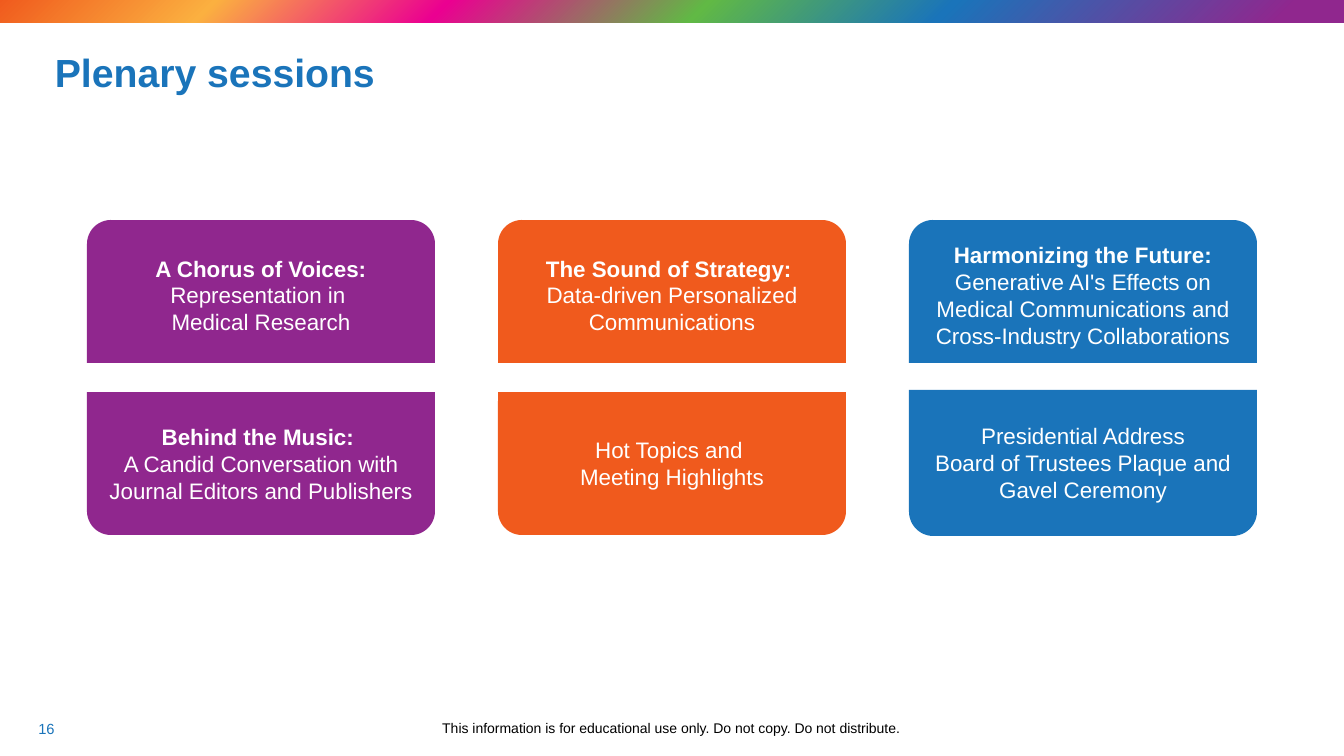
from dataclasses import dataclass

from lxml import etree
from pptx import Presentation
from pptx.dml.color import RGBColor
from pptx.enum.shapes import MSO_SHAPE
from pptx.enum.text import MSO_ANCHOR, PP_ALIGN
from pptx.oxml.ns import qn
from pptx.util import Emu, Pt

RECTANGLE = MSO_SHAPE.RECTANGLE
TAB = MSO_SHAPE.ROUND_2_SAME_RECTANGLE
TOP, MIDDLE = MSO_ANCHOR.TOP, MSO_ANCHOR.MIDDLE
LEFT, CENTER = PP_ALIGN.LEFT, PP_ALIGN.CENTER
EMU_PER_PX = 914400 / 100.8


@dataclass(frozen=True)
class Theme:
    font: str = "Arial"
    purple: str = "90278E"
    orange: str = "F05A1D"
    blue: str = "1A74BA"
    white: str = "FFFFFF"
    black: str = "000000"
    rainbow: tuple = ((0, "F05A1D"), (16, "FBB040"), (33, "EB0091"),
                      (52, "61B945"), (70, "1A74BA"), (95, "90278E"))
    title_size: float = 28
    body_size: float = 16
    number_size: float = 10.5
    notice_size: float = 10


THEME = Theme()

SESSIONS = [
    (THEME.purple,
     [[("A Chorus of Voices:", True), (" Representation in \vMedical Research", False)]],
     [[("Behind the Music: \v", True),
       ("A Candid Conversation with Journal Editors and Publishers", False)]],
     3, (392, 143)),
    (THEME.orange,
     [[("The Sound of Strategy: ", True)],
      [("Data-driven Personalized Communications", False)]],
     [[("Hot Topics and \vMeeting Highlights", False)]],
     2, (392, 143)),
    (THEME.blue,
     [[("Harmonizing the Future: ", True),
       ("Generative AI's Effects on Medical Communications and "
        "Cross-Industry Collaborations", False)]],
     [[("Presidential Address", False)],
      [("Board of Trustees Plaque and Gavel Ceremony", False)]],
     3, (390, 146)),
]


def px(*lengths):
    return [Emu(round(length * EMU_PER_PX)) for length in lengths]


def write(shape, paragraphs, size, color, align=CENTER, anchor=MIDDLE):
    frame = shape.text_frame
    frame.word_wrap = True
    frame.vertical_anchor = anchor
    for index, spans in enumerate(paragraphs):
        para = frame.add_paragraph() if index else frame.paragraphs[0]
        para.alignment = align
        para.font.name = THEME.font
        para.font.size = Pt(size)
        para.font.color.rgb = RGBColor.from_string(color)
        for text, bold in spans:
            for position, line in enumerate(text.split("\v")):
                if position:
                    para.add_line_break()
                if line:
                    span = para.add_run()
                    span.text = line
                    span.font.bold = bold
    return frame


def add_text(page, box, paragraphs, size, color, **layout):
    return write(page.shapes.add_textbox(*px(*box)), paragraphs, size, color, **layout)


def add_block(page, kind, box):
    block = page.shapes.add_shape(kind, *px(*box))
    block.shadow.inherit = False
    block.line.fill.background()
    return block


def add_rainbow_bar(page, box):
    bar = add_block(page, RECTANGLE, box)
    bar.fill.gradient()
    gradient = bar.fill._fill._gradFill
    stops = gradient.find(qn("a:gsLst"))
    for stop in list(stops):
        stops.remove(stop)
    for percent, color in THEME.rainbow:
        stop = etree.SubElement(stops, qn("a:gs"), pos=str(percent * 1000))
        etree.SubElement(stop, qn("a:srgbClr"), val=color)
    direction = gradient.find(qn("a:lin"))
    direction.set("ang", str(45 * 60000))
    direction.set("scaled", "0")


def add_title(page, box):
    frame = add_text(page, box, [[("Plenary sessions", True)]],
                     THEME.title_size, THEME.blue, align=LEFT)
    frame.paragraphs[0].line_spacing = 0.9


def add_tab(page, box, color, round_top):
    tab = add_block(page, TAB, box)
    tab.fill.solid()
    tab.fill.fore_color.rgb = RGBColor.from_string(color)
    tab.adjustments[0], tab.adjustments[1] = (0.167, 0) if round_top else (0, 0.167)
    return tab


def add_lower_label(page, box, paragraphs, line_count):
    left, top, width, height = box
    inset, label_height = 16, 27 * line_count
    label_box = (left + inset, top + (height - label_height) / 2,
                 width - 2 * inset, label_height)
    frame = add_text(page, label_box, paragraphs, THEME.body_size, THEME.white, anchor=TOP)
    frame.margin_left = frame.margin_right = frame.margin_top = frame.margin_bottom = 0


def add_sessions(page, box):
    left, top, width, height = box
    tab_width = 348
    step = (width - tab_width) / (len(SESSIONS) - 1)
    for column, (color, upper, lower, line_count, lower_span) in enumerate(SESSIONS):
        tab_left = left + column * step
        upper_tab = add_tab(page, (tab_left, top, tab_width, height), color, True)
        write(upper_tab, upper, THEME.body_size, THEME.white)
        lower_top, lower_height = lower_span
        lower_box = (tab_left, lower_top, tab_width, lower_height)
        add_tab(page, lower_box, color, False)
        add_lower_label(page, lower_box, lower, line_count)


def add_footer(page, box):
    left, top, width, height = box
    add_text(page, (left, top, 45, height), [[("16", False)]],
             THEME.number_size, THEME.blue, anchor=TOP)
    notice = "This information is for educational use only. Do not copy. Do not distribute."
    add_text(page, (left + 14, top, width - 14, height), [[(notice, False)]],
             THEME.notice_size, THEME.black, anchor=TOP)


def main():
    deck = Presentation()
    deck.slide_width, deck.slide_height = px(1344, 756)
    page = deck.slides.add_slide(deck.slide_layouts[6])
    add_rainbow_bar(page, (-1, -1, 1346, 24))
    add_title(page, (45, 21, 995, 108))
    add_sessions(page, (87, 220, 1170, 143))
    add_footer(page, (24, 715, 1280, 40))
    deck.save("out.pptx")


if __name__ == "__main__":
    main()
